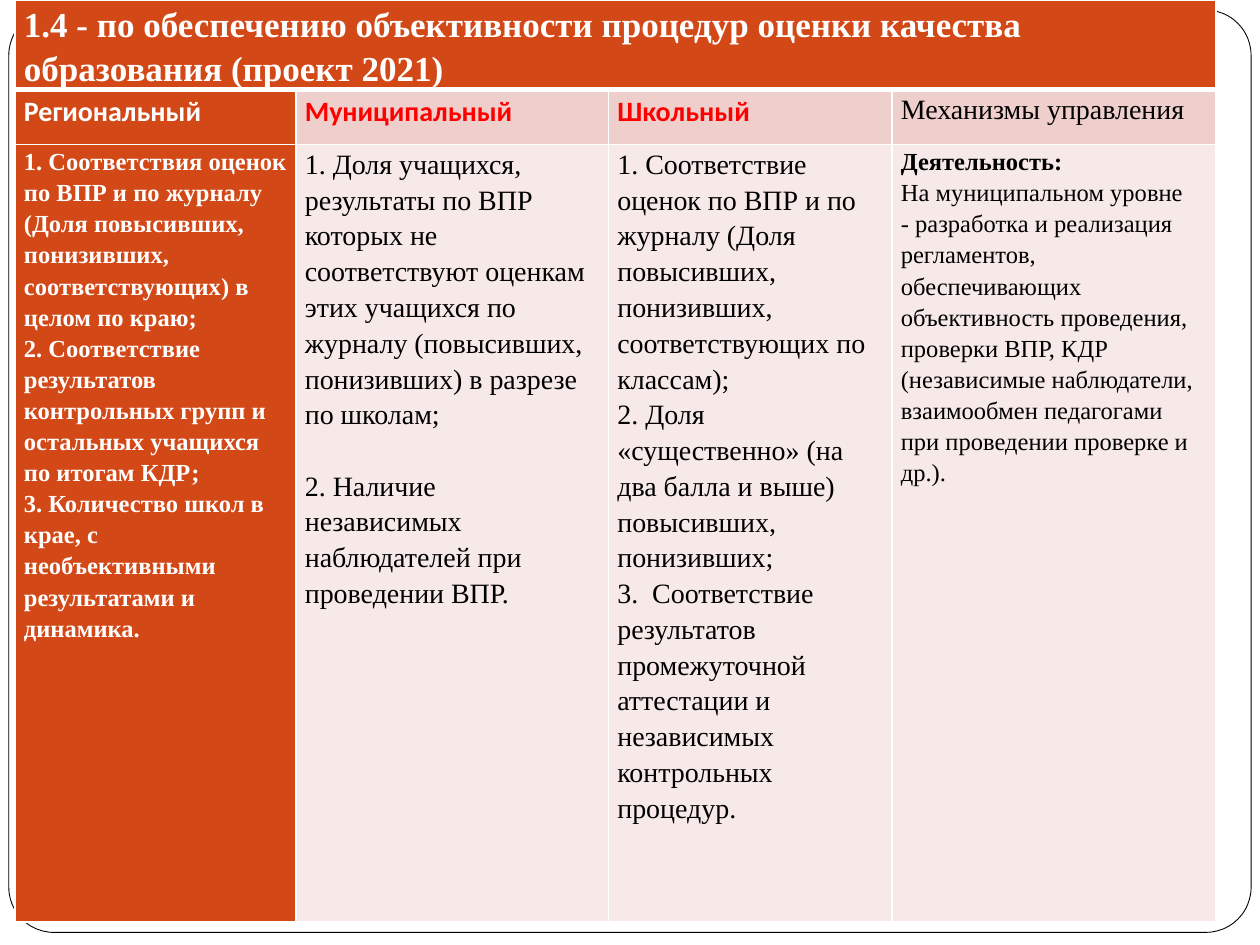
from lxml import etree
from pptx import Presentation
from pptx.dml.color import RGBColor
from pptx.enum.shapes import MSO_SHAPE
from pptx.oxml.ns import qn
from pptx.util import Inches, Pt

ROUNDED = MSO_SHAPE.ROUNDED_RECTANGLE
BLANK_LAYOUT = 6
SERIF = "Times New Roman"
SANS = "Calibri"
COLORS = {
    "white": "FFFFFF",
    "black": "000000",
    "red": "FF0000",
    "accent": "D34817",
    "header": "EFCFCC",
    "body": "F7E9E8",
}
COLUMN_WIDTHS = [2.23, 2.48, 2.25, 2.57]
ROW_HEIGHTS = [0.69, 0.44, 6.17]
THIN, THICK = 1, 3

TITLE = "1.4 - по обеспечению объективности процедур оценки качества образования (проект 2021)"

# Column heading, its format and the cell fill
HEADINGS = [
    ("Региональный", dict(font=SANS, color="white", bold=True), "accent"),
    ("Муниципальный", dict(font=SANS, color="red", bold=True), "header"),
    ("Школьный", dict(font=SANS, color="red", bold=True), "header"),
    ("Механизмы управления", {}, "header"),
]

# Each body cell: its fill and its paragraphs with their formats
REGIONAL = dict(size=14, color="white", bold=True)
ACTIVITY = dict(size=14)
BODY = [
    ("accent", [
        ("1. Соответствия оценок по ВПР и по журналу (Доля повысивших, понизивших, "
         "соответствующих) в целом по краю;", REGIONAL),
        ("2. Соответствие результатов контрольных групп и остальных учащихся "
         "по итогам КДР;", REGIONAL),
        ("3. Количество школ в крае, с необъективными результатами и динамика.", REGIONAL),
    ]),
    ("body", [
        ("1. Доля учащихся, результаты по ВПР которых не соответствуют оценкам этих "
         "учащихся по журналу (повысивших, понизивших) в разрезе по школам;", {}),
        ("2. Наличие независимых наблюдателей при проведении ВПР.", dict(before=20.4)),
    ]),
    ("body", [
        ("1. Соответствие оценок по ВПР и по журналу (Доля повысивших, понизивших, "
         "соответствующих по классам);", {}),
        ("2. Доля «существенно» (на два балла и выше) повысивших, понизивших;", {}),
        ("3.  Соответствие результатов промежуточной аттестации и независимых "
         "контрольных процедур.", {}),
    ]),
    ("body", [
        ("Деятельность:", dict(size=14, bold=True)),
        ("На муниципальном уровне", ACTIVITY),
        ("- разработка и реализация регламентов, обеспечивающих объективность "
         "проведения, проверки ВПР, КДР (независимые наблюдатели, взаимообмен "
         "педагогами при проведении проверке и др.).", ACTIVITY),
    ]),
]


def rgb(name):
    return RGBColor.from_string(COLORS[name])


def write_text(para, text, size=16, font=SERIF, color="black", bold=False, before=0):
    para.line_spacing = 1.15
    para.space_before = Pt(before)
    span = para.add_run()
    span.text = text
    span.font.size = Pt(size)
    span.font.name = font
    span.font.bold = bold
    span.font.color.rgb = rgb(color)


def add_borders(cell, top=THIN, bottom=THIN):
    properties = cell._tc.get_or_add_tcPr()
    widths = {"a:lnL": THIN, "a:lnR": THIN, "a:lnT": top, "a:lnB": bottom}
    for tag, width in widths.items():
        line = etree.SubElement(properties, qn(tag), w=str(Pt(width)))
        fill = etree.SubElement(line, qn("a:solidFill"))
        etree.SubElement(fill, qn("a:srgbClr"), val=COLORS["white"])


def format_cell(cell, fill, **borders):
    add_borders(cell, **borders)
    cell.fill.solid()
    cell.fill.fore_color.rgb = rgb(fill)
    cell.margin_left = cell.margin_right = Inches(0.07)
    cell.margin_top = cell.margin_bottom = 0


def fill_cell(cell, paragraphs):
    frame = cell.text_frame
    for index, (text, style) in enumerate(paragraphs):
        para = frame.add_paragraph() if index else frame.paragraphs[0]
        write_text(para, text, **style)


def add_frame(page):
    frame = page.shapes.add_shape(
        ROUNDED, Inches(0.07), Inches(0.08), Inches(9.86), Inches(7.32))
    frame.adjustments[0] = 0.049
    frame.shadow.inherit = False
    frame.fill.solid()
    frame.fill.fore_color.rgb = rgb("white")
    frame.line.color.rgb = rgb("black")
    frame.line.width = Pt(0.5)


def add_criteria_table(page):
    table = page.shapes.add_table(
        len(ROW_HEIGHTS), len(COLUMN_WIDTHS), Inches(0.12), 0,
        Inches(sum(COLUMN_WIDTHS)), Inches(sum(ROW_HEIGHTS))).table
    for column, width in zip(table.columns, COLUMN_WIDTHS):
        column.width = Inches(width)
    for row, height in zip(table.rows, ROW_HEIGHTS):
        row.height = Inches(height)

    # Title row across all columns
    for cell in table.rows[0].cells:
        format_cell(cell, "accent", bottom=THICK)
    title = table.cell(0, 0)
    title.merge(table.cell(0, len(COLUMN_WIDTHS) - 1))
    fill_cell(title, [(TITLE, dict(size=20, color="white", bold=True))])

    # Column headings
    for cell, (text, style, fill) in zip(table.rows[1].cells, HEADINGS):
        format_cell(cell, fill, top=THICK)
        fill_cell(cell, [(text, style)])

    # Criteria under each heading
    for cell, (fill, paragraphs) in zip(table.rows[2].cells, BODY):
        format_cell(cell, fill)
        fill_cell(cell, paragraphs)


def main():
    deck = Presentation()
    deck.slide_width = Inches(10)
    deck.slide_height = Inches(7.5)
    page = deck.slides.add_slide(deck.slide_layouts[BLANK_LAYOUT])
    add_frame(page)
    add_criteria_table(page)
    deck.save("out.pptx")


if __name__ == "__main__":
    main()
